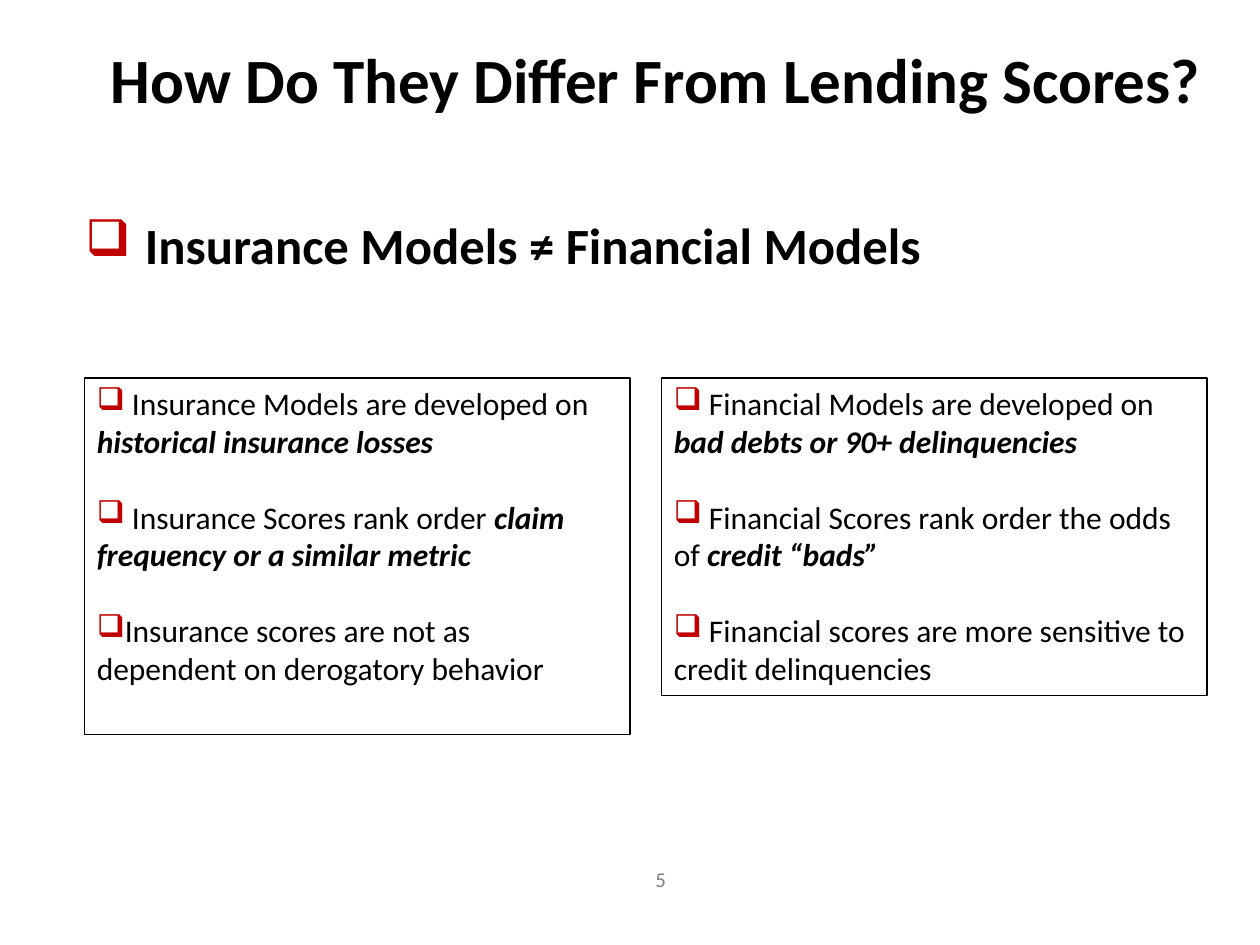
from dataclasses import dataclass

from lxml.etree import SubElement
from pptx import Presentation
from pptx.dml.color import RGBColor
from pptx.enum.shapes import MSO_SHAPE
from pptx.enum.text import MSO_ANCHOR, PP_ALIGN
from pptx.oxml.ns import qn
from pptx.util import Inches, Pt

TITLE = "How Do They Differ From Lending Scores?"
HEADING = " Insurance Models ≠ Financial Models"
PAGE = "5"
COLUMNS = [
    (2.83, [
        (" Insurance Models are developed on ", "historical insurance losses"),
        (" Insurance Scores rank order ", "claim frequency or a similar metric"),
        ("Insurance scores are not as dependent on derogatory behavior", ""),
    ]),
    (2.52, [
        (" Financial Models are developed on ", "bad debts or 90+ delinquencies"),
        (" Financial Scores rank order the odds of ", "credit “bads”"),
        (" Financial scores are more sensitive to credit delinquencies", ""),
    ]),
]
COLUMN_LEFT, COLUMN_TOP, COLUMN_WIDTH, COLUMN_GAP = 0.67, 3, 4.33, 0.25


@dataclass(frozen=True)
class Theme:
    """Colours, font and type sizes of the slide."""
    font: str = "Calibri"
    ink: RGBColor = RGBColor(0, 0, 0)
    muted: RGBColor = RGBColor(0x80, 0x80, 0x80)
    bullet: str = "C00000"
    title: float = 36
    heading: float = 29
    body: float = 18
    page: float = 12
    item_gap: float = 21.6


THEME = Theme()


def inches(*lengths):
    """Convert lengths to slide units."""
    return [Inches(length) for length in lengths]


def style(font, size, color=THEME.ink, bold=False, italic=False):
    """Apply the theme font with the given look."""
    font.name, font.size, font.bold, font.italic = THEME.font, Pt(size), bold, italic
    font.color.rgb = color


def add_bullet(paragraph, hanging=0):
    """Give a paragraph a coloured box bullet and a hanging indent."""
    properties = paragraph._p.get_or_add_pPr()
    properties.set("marL", str(Inches(hanging)))
    properties.set("indent", str(-Inches(hanging)))
    color = SubElement(properties, qn("a:buClr"))
    SubElement(color, qn("a:srgbClr"), val=THEME.bullet)
    SubElement(properties, qn("a:buChar"), char="❑")


def add_title(slide):
    """Place the slide title."""
    title = slide.shapes.title
    title.left, title.top, title.width, title.height = inches(0.58, 0.25, 9.25, 0.75)
    title.text_frame.text = TITLE
    title.text_frame.vertical_anchor = MSO_ANCHOR.MIDDLE
    paragraph = title.text_frame.paragraphs[0]
    paragraph.alignment = PP_ALIGN.CENTER
    style(paragraph.runs[0].font, THEME.title, bold=True)


def add_line(slide, place, text):
    """Add a one-line text box and return its paragraph."""
    frame = slide.shapes.add_textbox(*inches(*place)).text_frame
    frame.word_wrap = True
    frame.text = text
    return frame.paragraphs[0]


def add_column(slide, index, height, items):
    """Add an outlined box of bulleted statements."""
    left = COLUMN_LEFT + index * (COLUMN_WIDTH + COLUMN_GAP)
    column = slide.shapes.add_shape(
        MSO_SHAPE.RECTANGLE, *inches(left, COLUMN_TOP, COLUMN_WIDTH, height))
    column.shadow.inherit = False
    column.fill.background()
    column.line.color.rgb = THEME.ink
    column.line.width = Pt(0.75)
    frame = column.text_frame
    frame.word_wrap = True
    frame.vertical_anchor = MSO_ANCHOR.TOP
    for row, (statement, emphasis) in enumerate(items):
        paragraph = frame.add_paragraph() if row else frame.paragraphs[0]
        paragraph.alignment = PP_ALIGN.LEFT
        if row:
            paragraph.space_before = Pt(THEME.item_gap)
        add_bullet(paragraph)
        for text, strong in ((statement, False), (emphasis, True)):
            if text:
                run = paragraph.add_run()
                run.text = text
                style(run.font, THEME.body, bold=strong, italic=strong)


def main():
    """Build and save the slide."""
    deck = Presentation()
    deck.slide_width, deck.slide_height = inches(10, 7.5)
    slide = deck.slides.add_slide(deck.slide_layouts[5])
    add_title(slide)

    heading = add_line(slide, (0.58, 1.65, 9.25, 0.6), HEADING)
    add_bullet(heading, 0.38)
    style(heading.runs[0].font, THEME.heading, bold=True)

    for index, (height, items) in enumerate(COLUMNS):
        add_column(slide, index, height, items)

    page = add_line(slide, (4.08, 6.83, 2.33, 0.52), PAGE)
    page.alignment = PP_ALIGN.CENTER
    style(page.runs[0].font, THEME.page, THEME.muted)
    deck.save("out.pptx")


if __name__ == "__main__":
    main()
